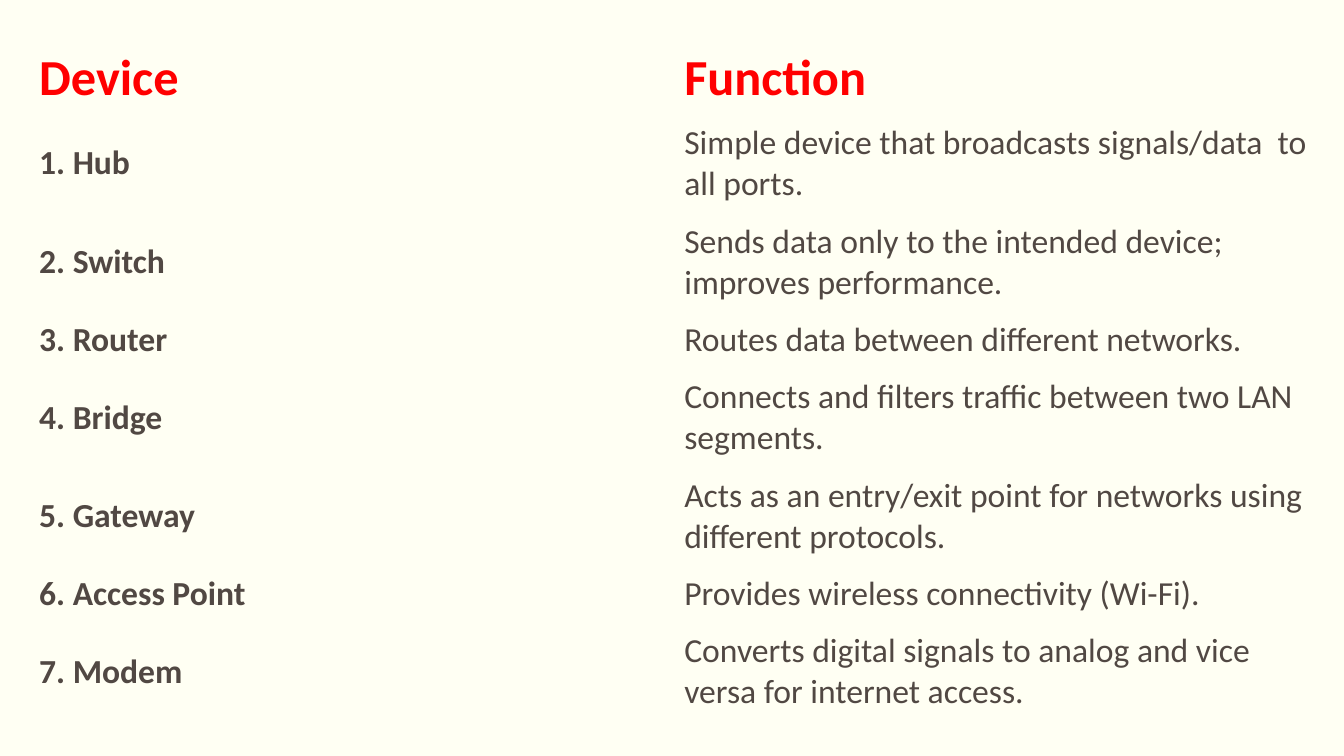
"""Build a slide with a table of network devices and their functions."""
from pptx import Presentation
from pptx import util as u
from pptx.dml import color
from pptx.enum import text
from pptx.oxml import ns


def rgb(hex_value):
    return color.RGBColor.from_string(hex_value)


presentation = Presentation()
presentation.slide_width = u.Pt(960)
presentation.slide_height = u.Pt(540)
slide = presentation.slides.add_slide(presentation.slide_layouts[6])
slide.background.fill.solid()
slide.background.fill.fore_color.rgb = rgb("FFFFF3")

HEADER, SINGLE, DOUBLE = 51, 40.4, 70.6
device_rows = [
    (HEADER, "Device", "Function"),
    (DOUBLE, "1. Hub", "Simple device that broadcasts signals/data  to all ports."),
    (DOUBLE, "2. Switch", "Sends data only to the intended device; improves performance."),
    (SINGLE, "3. Router", "Routes data between different networks."),
    (DOUBLE, "4. Bridge", "Connects and filters traffic between two LAN segments."),
    (DOUBLE, "5. Gateway", "Acts as an entry/exit point for networks using different protocols."),
    (SINGLE, "6. Access Point", "Provides wireless connectivity (Wi-Fi)."),
    (DOUBLE, "7. Modem", "Converts digital signals to analog and vice versa for internet access."),
]

table_height = sum(height for height, *_ in device_rows)
frame = slide.shapes.add_table(
    len(device_rows), 2, u.Pt(20.8), u.Pt(30.2), u.Pt(921.6), u.Pt(table_height)
)
table = frame.table
table.horz_banding = False
for style_id in frame.element.iter(ns.qn("a:tableStyleId")):
    style_id.text = "{2D5ABB26-0587-4C30-8999-92F81FD0307C}"

for row_index, (height, *labels) in enumerate(device_rows):
    table.rows[row_index].height = u.Pt(height)
    is_header = row_index == 0
    for column_index, label in enumerate(labels):
        cell = table.cell(row_index, column_index)
        cell.fill.background()
        cell.vertical_anchor = text.MSO_ANCHOR.MIDDLE
        cell.text = label
        font = cell.text_frame.paragraphs[0].runs[0].font
        font_format = {
            "name": "Calibri",
            "size": u.Pt(36 if is_header else 24),
            "bold": is_header or column_index == 0,
        }
        for attribute, value in font_format.items():
            setattr(font, attribute, value)
        font.color.rgb = rgb("FF0000" if is_header else "514843")

presentation.save("out.pptx")
